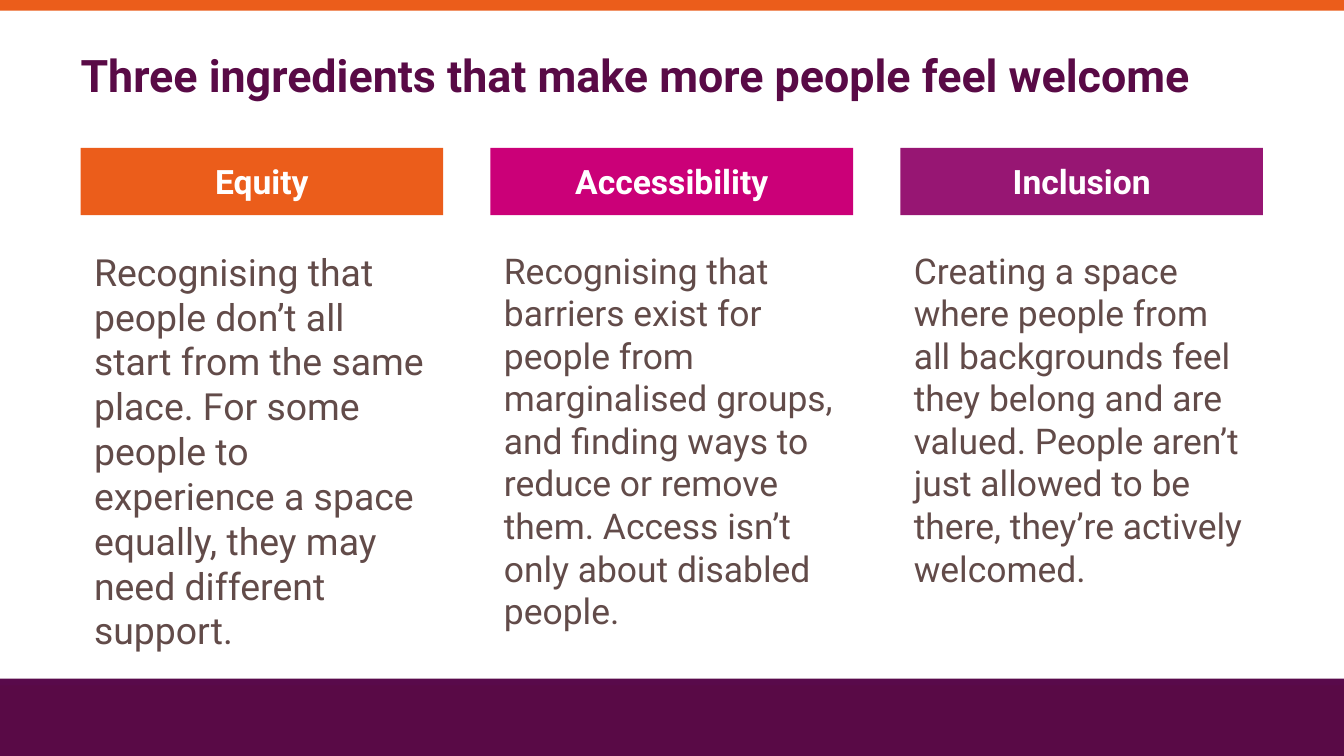
import pptx
import pptx.dml.color
import pptx.enum.shapes
import pptx.enum.text
import pptx.util

Cm = pptx.util.Cm
Pt = pptx.util.Pt
ALIGN = pptx.enum.text.PP_ALIGN
ANCHOR = pptx.enum.text.MSO_ANCHOR

PAGE_WIDTH, PAGE_HEIGHT = 33.87, 19.05
MARGIN = 2.03
COLUMN_WIDTH = 9.14
COLUMN_STEP = 10.33

INGREDIENTS = [
    ("Equity", "EB5D1B", 26.7,
     "Recognising that people don’t all start from the same place. For some people to "
     "experience a space equally, they may need different support."),
    ("Accessibility", "CB0078", 25.3,
     "Recognising that barriers exist for people from marginalised groups, and finding ways "
     "to reduce or remove them. Access isn’t only about disabled people."),
    ("Inclusion", "971673", 25.3,
     "Creating a space where people from all backgrounds feel they belong and are valued. "
     "People aren’t just allowed to be there, they’re actively welcomed."),
]


def colour(value):
    return pptx.dml.color.RGBColor.from_string(value)


def add_bar(page, left, top, width, height, fill):
    bar = page.shapes.add_shape(pptx.enum.shapes.MSO_SHAPE.RECTANGLE,
                                Cm(left), Cm(top), Cm(width), Cm(height))
    bar.shadow.inherit = False
    bar.fill.solid()
    bar.fill.fore_color.rgb = colour(fill)
    bar.line.fill.background()
    return bar


def write(box, text, size, ink, bold=False, align=ALIGN.LEFT, anchor=ANCHOR.MIDDLE,
          inset=(0.34, 0.17)):
    """Fill the box with one paragraph; inset is (sides, top and bottom) in cm."""
    frame = box.text_frame
    frame.word_wrap = True
    frame.vertical_anchor = anchor
    frame.margin_left = frame.margin_right = Cm(inset[0])
    frame.margin_top = frame.margin_bottom = Cm(inset[1])
    para = frame.paragraphs[0]
    para.text = text
    para.alignment = align
    para.font.name = "Roboto"
    para.font.size = Pt(size)
    para.font.bold = bold
    para.font.color.rgb = colour(ink)


def add_page_bands(page):
    add_bar(page, 0, 17.1, PAGE_WIDTH, PAGE_HEIGHT - 17.1, "590A4B")
    add_bar(page, 0, 17.27, PAGE_WIDTH, PAGE_HEIGHT - 17.27, "590A46")
    add_bar(page, 0, 0, PAGE_WIDTH, 0.27, "EB5D1B")


def add_title(page, left, top, width, height):
    box = page.shapes.add_textbox(Cm(left), Cm(top), Cm(width), Cm(height))
    write(box, "Three ingredients that make more people feel welcome", 32, "590A46",
          bold=True, inset=(0, 0))


def add_ingredient(page, left, top, width, name, fill, size, description):
    heading = add_bar(page, left, top, width, 1.69, fill)
    write(heading, name, 24, "FFFFFF", bold=True, align=ALIGN.CENTER)
    body = page.shapes.add_textbox(Cm(left), Cm(top + 2.37), Cm(width), Cm(4.74))
    write(body, description, size, "624B49", anchor=ANCHOR.TOP)


def main():
    deck = pptx.Presentation()
    deck.slide_width, deck.slide_height = Cm(PAGE_WIDTH), Cm(PAGE_HEIGHT)
    page = deck.slides.add_slide(deck.slide_layouts[6])
    add_page_bands(page)
    add_title(page, MARGIN, 0.69, PAGE_WIDTH - 2 * MARGIN, 2.36)
    for index, ingredient in enumerate(INGREDIENTS):
        add_ingredient(page, MARGIN + index * COLUMN_STEP, 3.73, COLUMN_WIDTH, *ingredient)
    deck.save("out.pptx")


if __name__ == "__main__":
    main()
